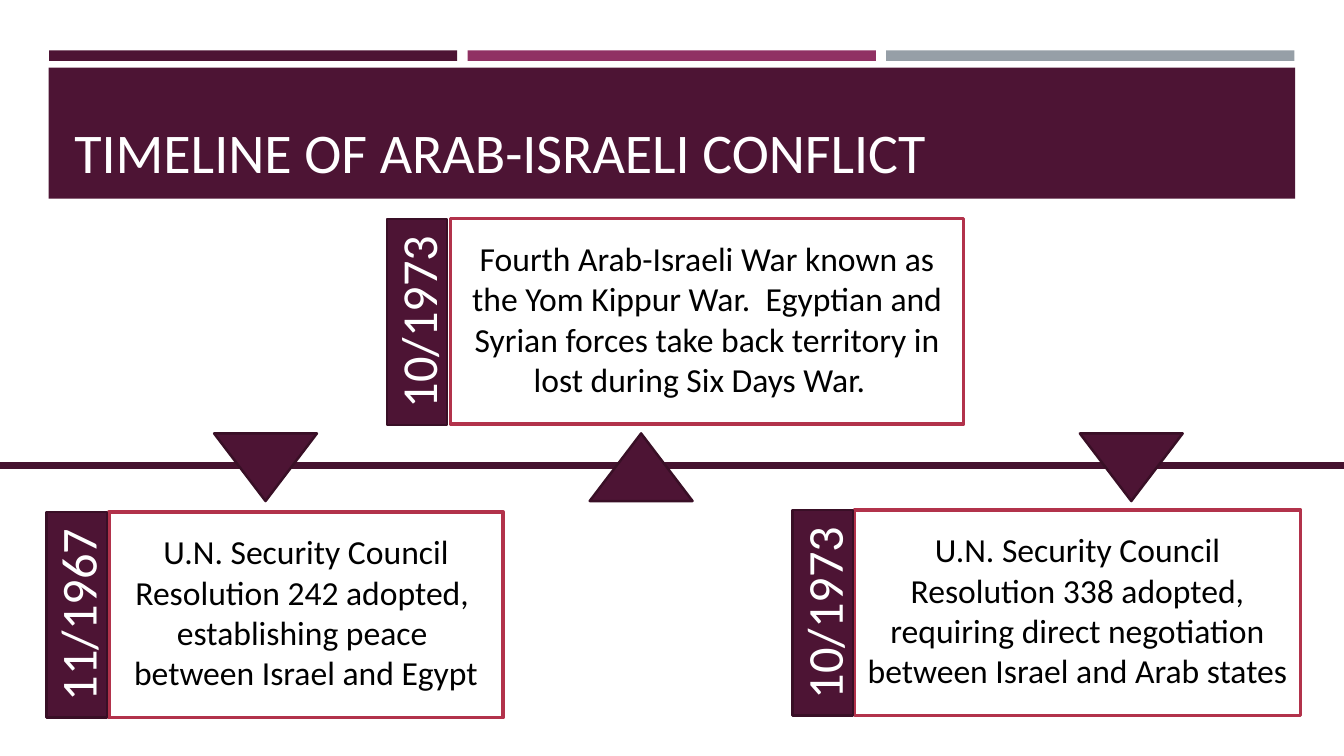
from dataclasses import dataclass

from pptx import Presentation
from pptx.enum import shapes, text
from pptx.oxml import ns, xmlchemy
from pptx.util import Pt

COLORS = {
    "plum": "4D1434",
    "magenta": "903163",
    "gray": "969FA7",
    "axis": "45122F",
    "edge": "390F26",
    "frame": "B2324B",
    "white": "FFFFFF",
    "black": "000000",
}
FONT = "Calibri"
PAGE_WIDTH, PAGE_HEIGHT = 960, 540
AXIS_Y = 332.7
LABEL_WIDTH, CARD_HEIGHT = 43.2, 146.9
MARKER_WIDTH, MARKER_HEIGHT, MARKER_TOP = 73.5, 48.3, 309.6
TEXT_OFFSET, TEXT_HEIGHT = 10.1, 123.8


@dataclass
class Event:
    date: str
    paragraphs: list[str]
    label_left: float
    label_top: float
    frame_left: float
    frame_top: float
    frame_width: float
    marker_left: float
    points_down: bool


EVENTS = [
    Event("11/1967",
          ["U.N. Security Council Resolution 242 adopted, ",
           "establishing peace ", "between Israel and Egypt"],
          33.1, 365.8, 77.8, 365.8, 281.5, 152.9, True),
    Event("10/1973",
          ["Fourth Arab-Israeli War known as the Yom Kippur War.  Egyptian and "
           "Syrian forces take back territory in lost during Six Days War.  "],
          276.3, 156.6, 321.8, 156.2, 366.5, 421.2, False),
    Event("10/1973",
          ["U.N. Security Council Resolution 338 adopted, requiring direct "
           "negotiation between Israel and Arab states"],
          566.1, 364.3, 610.2, 364.3, 318.9, 771.3, True),
]


def rgb(name: str):
    from_hex = RGBColor.from_string
    return from_hex(COLORS[name])


def write(box, paragraphs: list[str], *, size: float, color: str,
          align=text.PP_ALIGN.CENTER, anchor=text.MSO_ANCHOR.MIDDLE) -> None:
    frame = box.text_frame
    frame.word_wrap = True
    frame.vertical_anchor = anchor
    for index, line in enumerate(paragraphs):
        para = frame.add_paragraph() if index else frame.paragraphs[0]
        para.alignment = align
        span = para.add_run()
        span.text = line
        span.font.name = FONT
        span.font.size = Pt(size)
        span.font.color.rgb = rgb(color)


def add_text_box(page, left: float, top: float, width: float, height: float):
    return page.shapes.add_textbox(Pt(left), Pt(top), Pt(width), Pt(height))


def add_block(page, left: float, top: float, width: float, height: float, *,
              kind=shapes.MSO_SHAPE.RECTANGLE, fill: str | None = None,
              line: str | None = None, weight: float = 1.75):
    block = page.shapes.add_shape(kind, Pt(left), Pt(top), Pt(width), Pt(height))
    block.shadow.inherit = False
    if fill:
        block.fill.solid()
        block.fill.fore_color.rgb = rgb(fill)
    else:
        block.fill.background()
    if line:
        block.line.color.rgb = rgb(line)
        block.line.width = Pt(weight)
    else:
        block.line.fill.background()
    return block


def add_header(page) -> None:
    for index, color in enumerate(("plum", "magenta", "gray")):
        add_block(page, 35 + 299 * index, 36, 291.6, 7.5, fill=color)
    add_block(page, 34.8, 48.4, 890.4, 93.6, fill="plum")
    title = add_text_box(page, 46, 55.4, 868, 80)
    write(title, ["TIMELINE OF ARAB-ISRAELI CONFLICT"], size=40, color="white",
          align=text.PP_ALIGN.LEFT, anchor=text.MSO_ANCHOR.BOTTOM)


def add_axis(page) -> None:
    axis = page.shapes.add_connector(shapes.MSO_CONNECTOR.STRAIGHT,
                                     Pt(0), Pt(AXIS_Y), Pt(PAGE_WIDTH), Pt(AXIS_Y))
    axis.line.color.rgb = rgb("axis")
    axis.line.width = Pt(5)
    axis.element.spPr.append(xmlchemy.OxmlElement("a:effectLst"))


def add_event(page, event: Event) -> None:
    """Draw the marker, the upright date label and the framed description."""
    marker = add_block(page, event.marker_left, MARKER_TOP, MARKER_WIDTH, MARKER_HEIGHT,
                       kind=shapes.MSO_SHAPE.ISOSCELES_TRIANGLE,
                       fill="plum", line="edge")
    marker.rotation = 180 if event.points_down else 0

    add_block(page, event.frame_left, event.frame_top, event.frame_width, CARD_HEIGHT,
              line="frame", weight=2.5)
    label = add_block(page, event.label_left, event.label_top, LABEL_WIDTH, CARD_HEIGHT,
                      fill="plum", line="edge")
    write(label, [event.date], size=36, color="white")
    label.element.find(ns.qn("p:txBody")).find(ns.qn("a:bodyPr")).set("vert", "vert270")

    description = add_text_box(page, event.frame_left, event.frame_top + TEXT_OFFSET,
                               event.frame_width, TEXT_HEIGHT)
    write(description, event.paragraphs, size=24, color="black",
          anchor=text.MSO_ANCHOR.TOP)


def main() -> None:
    deck = Presentation()
    deck.slide_width, deck.slide_height = Pt(PAGE_WIDTH), Pt(PAGE_HEIGHT)
    page = deck.slides.add_slide(deck.slide_layouts[6])
    add_header(page)
    add_axis(page)
    for event in EVENTS:
        add_event(page, event)
    deck.save("out.pptx")


from pptx.dml.color import RGBColor

if __name__ == "__main__":
    main()
